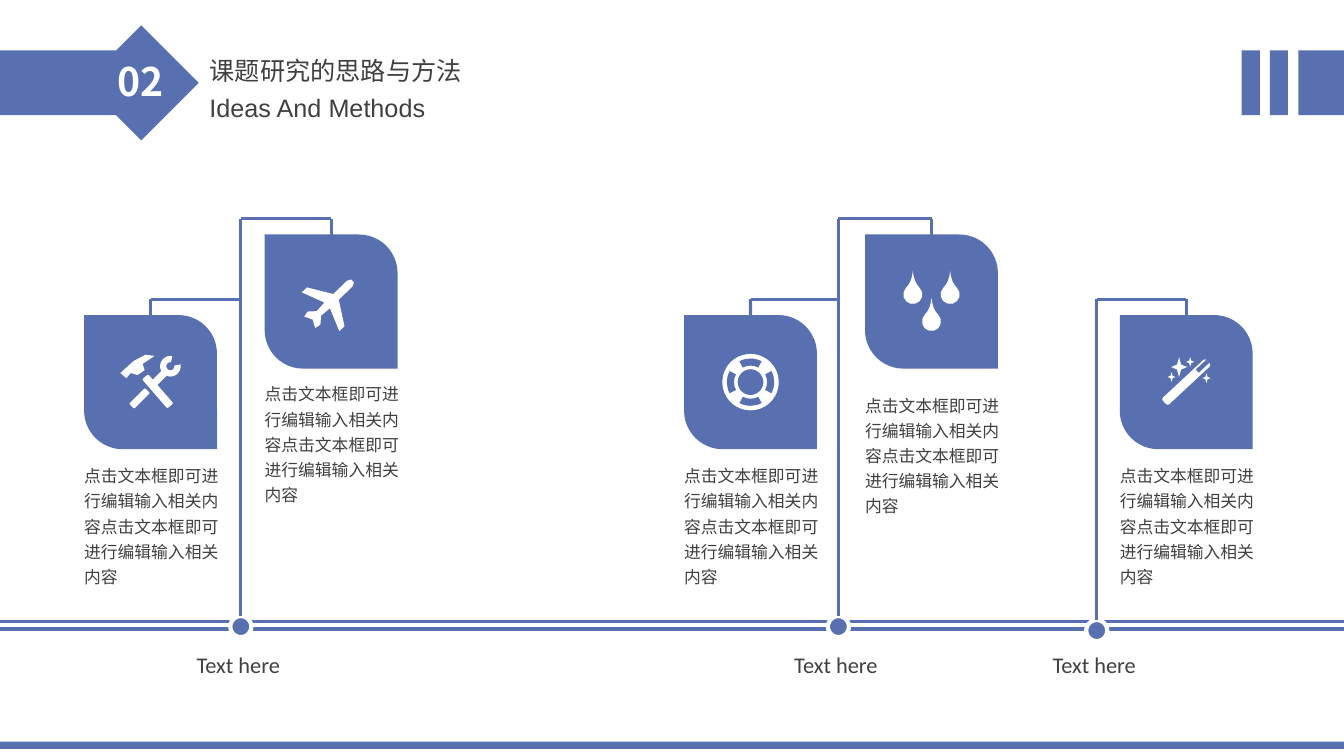
from lxml import etree
from pptx import Presentation
from pptx.dml.color import RGBColor
from pptx.enum.shapes import MSO_CONNECTOR, MSO_SHAPE
from pptx.enum.text import MSO_ANCHOR, MSO_AUTO_SIZE, PP_ALIGN
from pptx.oxml.ns import qn
from pptx.util import Cm, Pt

RECT, DIAMOND, OVAL = MSO_SHAPE.RECTANGLE, MSO_SHAPE.DIAMOND, MSO_SHAPE.OVAL
ROUNDED, LEAF = MSO_SHAPE.ROUNDED_RECTANGLE, MSO_SHAPE.ROUND_2_DIAG_RECTANGLE
STAR, DROP = MSO_SHAPE.STAR_4_POINT, MSO_SHAPE.TEAR
DONUT, ARC = MSO_SHAPE.DONUT, MSO_SHAPE.BLOCK_ARC
STRAIGHT = MSO_CONNECTOR.STRAIGHT
LEFT, CENTER = PP_ALIGN.LEFT, PP_ALIGN.CENTER
TOP, GROW = MSO_ANCHOR.TOP, MSO_AUTO_SIZE.SHAPE_TO_FIT_TEXT

COLORS = {"blue": "5870B0", "white": "FFFFFF", "grey": "404040"}
CJK = "Noto Sans CJK SC"
WIDTH, HEIGHT = 33.87, 19.05

NUMBER = "02"
TITLE = "课题研究的思路与方法"
SUBTITLE = "Ideas And Methods"
LABEL = "Text here "
BODY = "点击文本框即可进行编辑输入相关内容点击文本框即可进行编辑输入相关内容"

BAND_Y, BAND_H = 1.27, 1.63
BANDS = [(0, 2.92), (31.29, 0.46), (32, 0.46), (32.72, 1.15)]
RAILS = [15.67, 15.85]
LEAF_W, LEAF_H, DOT = 3.35, 3.38, 0.53
BAR_Y = {"high": 5.51, "low": 7.54}
LEAF_DROP = 0.4

# stem x, dot centre y, leaves: tier, leaf x, gap above text, icon
BRANCHES = [
    (6.07, 15.79, [("low", 2.12, 0.17, "tools"), ("high", 6.67, 0.14, "plane")]),
    (21.13, 15.79, [("low", 17.24, 0.17, "lifebuoy"), ("high", 21.8, 0.42, "drops")]),
    (27.64, 15.89, [("low", 28.22, 0.17, "wand")]),
]

# kind, centre x, centre y, width, height, rotation, fill, adjustments
ICON_PARTS = {
    "tools": [
        (ROUNDED, 0.18, 0.23, 0.2, 0.97, -41, "white", []),
        (RECT, 0.25, -0.13, 0.18, 0.45, 45, "white", []),
        (ROUNDED, -0.28, 0.41, 0.18, 0.56, 45, "white", []),
        (ARC, 0.5, -0.4, 0.52, 0.52, 0, "white", [210, 168, 0.3]),
    ],
    "plane": [],
    "lifebuoy": [(DONUT, 0, 0, 1.42, 1.42, 0, "white", [0.27])] + [
        (ARC, 0, 0, 1.19, 1.19, turn, "blue", [145.2, 178.8, 0.15])
        for turn in range(0, 360, 90)],
    "drops": [(DROP, x, y, 0.48, 0.48, -45, "white", [1.75])
              for x, y in [(-0.47, -0.18), (0.47, -0.18), (0, 0.5)]],
    "wand": [
        (ROUNDED, 0, 0, 0.23, 1.5, 47, "white", [0.25]),
        (RECT, 0.41, -0.4, 0.11, 0.36, 47, "blue", []),
    ] + [(STAR, x, y, size * 0.8, size, 0, "white", [0.18])
         for x, y, size in [(-0.37, -0.13, 0.25), (-0.18, -0.38, 0.5),
                            (0.1, -0.51, 0.25), (0.51, -0.1, 0.25)]],
}
HALF_PLANE = [(0.05, -0.75), (0.1, -0.65), (0.1, -0.17), (0.68, 0.19), (0.68, 0.37),
              (0.1, 0.14), (0.08, 0.43), (0.23, 0.6), (0.2, 0.75), (0, 0.65)]
HAMMER_HEAD = [(-0.76, -0.23), (-0.43, -0.53), (-0.13, -0.69), (0.1, -0.66),
               (-0.2, -0.46), (-0.15, -0.3), (-0.33, -0.18), (-0.5, -0.23), (-0.61, -0.1)]
OUTLINES = {
    "plane": (HALF_PLANE + [(-x, y) for x, y in reversed(HALF_PLANE)], 46),
    "tools": (HAMMER_HEAD, 0),
}


def color(name):
    return RGBColor.from_string(COLORS[name])


def paint(sp, fill, line=None):
    sp.shadow.inherit = False
    sp.fill.solid()
    sp.fill.fore_color.rgb = color(fill)
    if line:
        sp.line.color.rgb = color(line)
        sp.line.width = Pt(3)
    else:
        sp.line.fill.background()
    return sp


def add_shape(kind, x, y, w, h, fill="blue", adjust=(), line=None):
    sp = s.shapes.add_shape(kind, Cm(x), Cm(y), Cm(w), Cm(h))
    for i, value in enumerate(adjust):
        sp.adjustments[i] = value
    return paint(sp, fill, line)


def add_line(x1, y1, x2, y2):
    c = s.shapes.add_connector(STRAIGHT, Cm(x1), Cm(y1), Cm(x2), Cm(y2))
    c.line.color.rgb = color("blue")
    c.line.width = Pt(2.25)
    etree.SubElement(c._element.spPr, qn("a:effectLst"))
    return c


def write(sp, text, size, font, ink="grey", bold=False, align=LEFT, spacing=1.0,
          wrap=True, inset=None):
    tf = sp.text_frame
    for name, value in {"word_wrap": wrap, "auto_size": GROW, "vertical_anchor": TOP}.items():
        setattr(tf, name, value)
    if inset:
        for side in ("left", "right", "top", "bottom"):
            setattr(tf, f"margin_{side}", Cm(inset))
    p = tf.paragraphs[0]
    p.alignment, p.line_spacing = align, spacing
    r = p.add_run()
    r.text = text
    for name, value in {"size": Pt(size), "name": font, "bold": bold}.items():
        setattr(r.font, name, value)
    r.font.color.rgb = color(ink)
    etree.SubElement(r._r.get_or_add_rPr(), qn("a:ea"), typeface=font)


def add_text(x, y, w, h, *args, **formats):
    write(s.shapes.add_textbox(Cm(x), Cm(y), Cm(w), Cm(h)), *args, **formats)


def add_icon(icon, cx, cy):
    if icon in OUTLINES:
        outline, rotation = OUTLINES[icon]
        points = [(Cm(cx + x), Cm(cy + y)) for x, y in outline]
        builder = s.shapes.build_freeform(*points[0])
        builder.add_line_segments(points[1:], close=True)
        paint(builder.convert_to_shape(), "white").rotation = rotation
    for kind, x, y, w, h, rotation, fill, adjust in ICON_PARTS[icon]:
        sp = add_shape(kind, cx + x - w / 2, cy + y - h / 2, w, h, fill, adjust)
        sp.rotation = rotation


prs = Presentation()
prs.slide_width, prs.slide_height = Cm(WIDTH), Cm(HEIGHT)
s = prs.slides.add_slide(prs.slide_layouts[5])

for x, w in BANDS:
    add_shape(RECT, x, BAND_Y, w, BAND_H)
add_shape(DIAMOND, 2.11, 0.64, 2.9, 2.9)
add_shape(RECT, 0, 18.69, WIDTH, 0.18)

title = s.shapes.title
for name, value in {"left": 5.03, "top": 0.51, "width": 6.93, "height": 1.57}.items():
    setattr(title, name, Cm(value))
write(title, TITLE, 18, CJK, spacing=2.0, wrap=False)
add_text(2.64, 1.32, 1.83, 1.45, NUMBER, 28, CJK, "white", True, CENTER)
add_text(5.03, 2.21, 13.94, 1.02, SUBTITLE, 18, "Arial")

for y in RAILS:
    add_line(0, y, WIDTH, y)

for stem, dot_y, leaves in BRANCHES:
    add_shape(OVAL, stem - DOT / 2, dot_y - DOT / 2, DOT, DOT, line="white")
    add_line(stem, dot_y - DOT / 2, stem, min(BAR_Y[leaf[0]] for leaf in leaves))
    add_text(stem - 1.25, 16.28, 2.5, 0.94, LABEL, 16, "Calibri",
             align=CENTER, wrap=False, inset=0.13)
    for tier, x, gap, icon in leaves:
        bar_y = BAR_Y[tier]
        leaf_y = bar_y + LEAF_DROP
        middle = x + LEAF_W / 2
        leaf = add_shape(LEAF, x, leaf_y, LEAF_W, LEAF_H, adjust=[0, 0.29])
        add_line(stem, bar_y, middle, bar_y)
        add_line(middle, bar_y, middle, leaf_y).end_connect(leaf, 0)
        add_icon(icon, middle, leaf_y + LEAF_H / 2)
        add_text(x - 0.25, leaf_y + LEAF_H + gap, 4.04, 3.45, BODY, 12, CJK, spacing=1.25)

prs.save("out.pptx")
